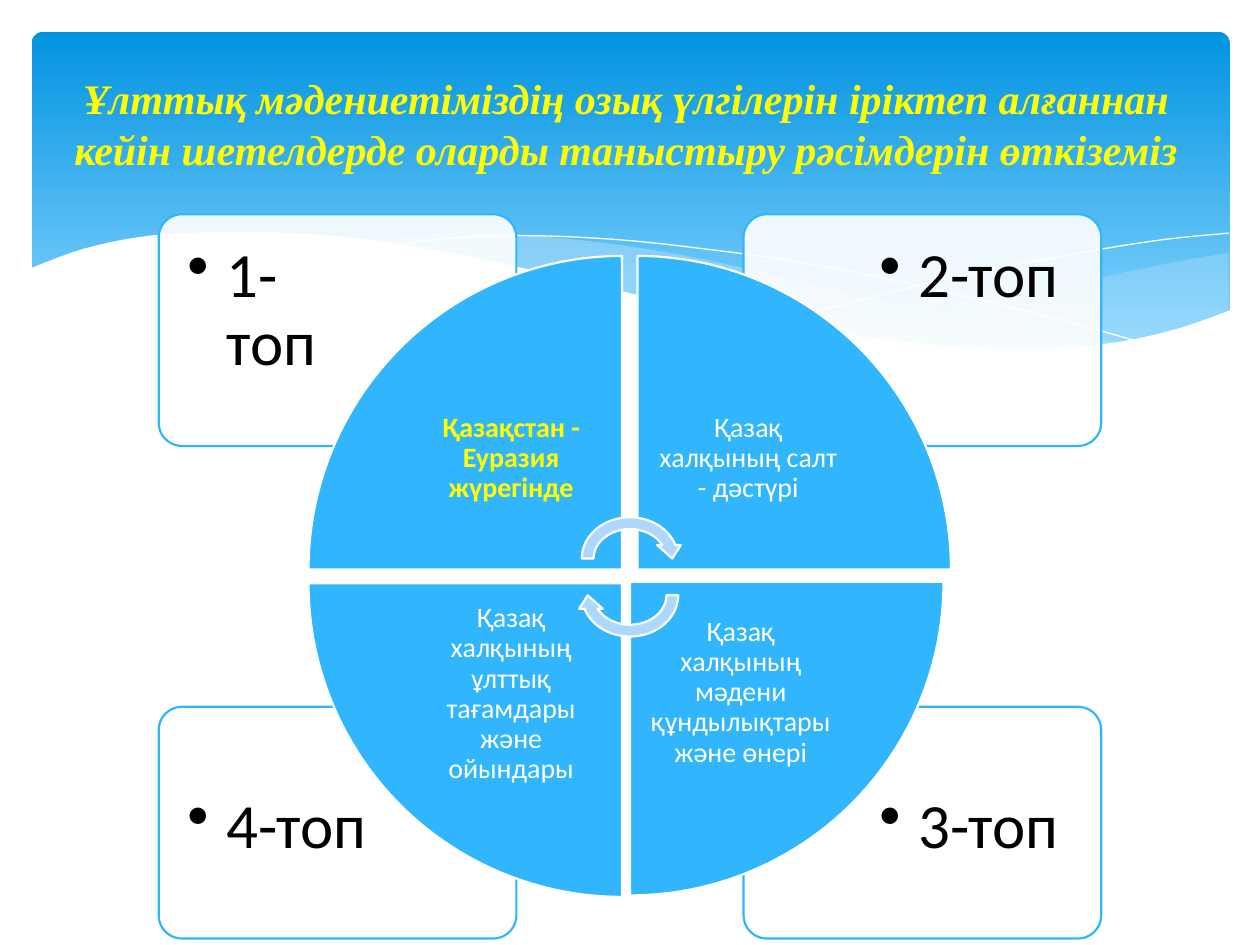
from lxml import etree
from pptx import Presentation
from pptx import util as u
from pptx.dml.color import RGBColor
from pptx.enum import shapes, text
from pptx.oxml.ns import qn

DEEP_BLUE = RGBColor(0x02, 0x93, 0xE0)
LIGHT_BLUE = RGBColor(0x83, 0xD3, 0xFE)
MIST = RGBColor(0xC6, 0xE7, 0xFC)
SKY = RGBColor(0x31, 0xB6, 0xFD)
ARROW_BLUE = RGBColor(0xAE, 0xD7, 0xFE)
WHITE = RGBColor(0xFF, 0xFF, 0xFF)
BLACK = RGBColor(0, 0, 0)
YELLOW = RGBColor(0xFF, 0xFF, 0)

RIGHT_WAVE_TOP = [(24.13, 4.45), (22.76, 4.7), (21.23, 5.03), (19.15, 5.51),
                  (17.3, 5.89), (16.15, 6.1)]
RIGHT_WAVE_BOTTOM = [(16.15, 6.1), (17.27, 6.25), (18.59, 6.38), (20.04, 6.43),
                     (21.51, 6.32), (22.76, 6.1), (24.13, 5.64)]
MIDDLE_WAVE_TOP = [(22.05, 6.3), (19.86, 5.97), (17.3, 5.46), (15.34, 5),
                   (13.46, 4.57), (11.79, 4.29), (10.03, 4.11), (8.53, 4.06),
                   (6.63, 4.22)]
MIDDLE_WAVE_BOTTOM = [(6.63, 4.22), (8.56, 4.52), (10.77, 5), (12.83, 5.46),
                      (15.06, 5.92), (17.02, 6.22), (19, 6.4), (20.4, 6.43),
                      (22.05, 6.3)]
FALLING_LINE = [(7.21, 4.32), (8.33, 4.17), (9.93, 4.11), (11.79, 4.19),
                (13.49, 4.37), (15.52, 4.65), (17.83, 5.11), (20.47, 5.74),
                (22.4, 6.27)]
RISING_LINE = [(14.94, 5.89), (17.02, 5.33), (19.08, 4.85), (21.36, 4.42),
               (22.83, 4.19), (24.13, 4.06)]
WHITE_WAVE_TOP = [(24.18, 5.61), (22.99, 6.02), (21.59, 6.3), (19.91, 6.4),
                  (17.81, 6.27), (15.27, 5.92), (12.8, 5.44), (10.72, 4.95),
                  (8.64, 4.5), (6.78, 4.19), (5.21, 4.06), (3.86, 4.04),
                  (2.39, 4.11), (1.07, 4.37), (-0.05, 4.78)]
WHITE_WAVE_BASE = [(-0.05, 7.72), (24.18, 7.72)]

GROUPS = [
    (0, 0, "1- топ", "Қазақстан - Еуразия жүрегінде", YELLOW),
    (1, 0, "2-топ", "Қазақ халқының салт - дәстүрі", WHITE),
    (1, 1, "3-топ", "Қазақ халқының мәдени құндылықтары және өнері", WHITE),
    (0, 1, "4-топ", "Қазақ халқының ұлттық тағамдары және ойындары", WHITE),
]
WEDGE_ROTATION = {(0, 0): 0, (1, 0): 90, (1, 1): 180, (0, 1): 270}


def paint(shape, fill=None, line=None, opacity=100, width=1.25):
    shape.shadow.inherit = False
    if fill is None:
        shape.fill.background()
    else:
        shape.fill.solid()
        shape.fill.fore_color.rgb = fill
        if opacity < 100:
            color = shape.fill._xPr.find(qn("a:solidFill"))[0]
            etree.SubElement(color, qn("a:alpha"), val=str(opacity * 1000))
    if line is None:
        shape.line.fill.background()
    else:
        shape.line.color.rgb = line
        shape.line.width = u.Pt(width)


def add_preset(slide, kind, left, top, width, height):
    return slide.shapes.add_shape(kind, u.Cm(left), u.Cm(top), u.Cm(width), u.Cm(height))


def smooth(points, steps=5):
    padded = [points[0], *points, points[-1]]
    curve = [points[0]]
    for before, start, end, after in zip(padded, padded[1:], padded[2:], padded[3:]):
        for step in range(1, steps + 1):
            t = step / steps
            curve.append(tuple(
                (2 * b + (c - a) * t + (2 * a - 5 * b + 4 * c - d) * t ** 2
                 + (3 * b - a - 3 * c + d) * t ** 3) / 2
                for a, b, c, d in zip(before, start, end, after)))
    return curve


def add_wave(slide, left, top, points, closed=True):
    placed = [(u.Cm(left + x), u.Cm(top + y)) for x, y in points]
    builder = slide.shapes.build_freeform(*placed[0])
    builder.add_line_segments(placed[1:], close=closed)
    return builder.convert_to_shape()


def add_banner(slide, left, top, width, height):
    banner = add_preset(slide, shapes.MSO_SHAPE.ROUNDED_RECTANGLE, left, top, width, height)
    banner.adjustments[0] = 0.034
    paint(banner)
    banner.fill.gradient()
    banner.fill.gradient_angle = 270
    stops = zip(banner.fill.gradient_stops, (0, 0.9), (DEEP_BLUE, LIGHT_BLUE))
    for stop, position, color in stops:
        stop.position = position
        stop.color.rgb = color

    right_wave = smooth(RIGHT_WAVE_TOP) + smooth(RIGHT_WAVE_BOTTOM)
    middle_wave = smooth(MIDDLE_WAVE_TOP) + smooth(MIDDLE_WAVE_BOTTOM)
    paint(add_wave(slide, left, top, right_wave), MIST, opacity=29)
    paint(add_wave(slide, left, top, middle_wave), MIST, opacity=40)
    for line in (FALLING_LINE, RISING_LINE):
        paint(add_wave(slide, left, top, smooth(line), closed=False), line=WHITE, width=0)
    paint(add_wave(slide, left, top, smooth(WHITE_WAVE_TOP) + WHITE_WAVE_BASE), WHITE)


def add_title(slide, left, top, width, height):
    title = slide.shapes.title
    title.element.getparent().append(title.element)
    title.left, title.top = u.Cm(left), u.Cm(top)
    title.width, title.height = u.Cm(width), u.Cm(height)
    frame = title.text_frame
    frame.text = ("Ұлттық мәдениетіміздің озық үлгілерін іріктеп алғаннан кейін "
                  "шетелдерде оларды таныстыру рәсімдерін өткіземіз")
    frame.word_wrap = True
    frame.vertical_anchor = text.MSO_ANCHOR.MIDDLE
    paragraph = frame.paragraphs[0]
    paragraph.alignment = text.PP_ALIGN.CENTER
    set_font(paragraph, "Times New Roman", 24, YELLOW, bold=True)
    paragraph.font.italic = True


def set_font(paragraph, name, size, color, bold=False):
    font = paragraph.font
    font.name, font.size, font.bold = name, u.Pt(size), bold
    font.color.rgb = color


def add_text(slide, left, top, width, height, words, inset):
    box = slide.shapes.add_textbox(u.Cm(left), u.Cm(top), u.Cm(width), u.Cm(height))
    frame = box.text_frame
    frame.word_wrap = True
    frame.margin_left = frame.margin_right = u.Cm(inset)
    frame.margin_top = frame.margin_bottom = u.Cm(inset)
    frame.text = words
    paragraph = frame.paragraphs[0]
    paragraph.line_spacing = 0.9
    paragraph.space_after = u.Pt(5.5)
    return frame, paragraph


def add_card(slide, left, top, width, height, column, row, label):
    card = add_preset(slide, shapes.MSO_SHAPE.ROUNDED_RECTANGLE, left, top, width, height)
    card.adjustments[0] = 0.1
    paint(card, WHITE, SKY, opacity=90)
    margin, label_width, label_height = 0.1, 4.85, 3.3
    x = left + (width - label_width - margin if column else margin)
    y = top + (height - label_height - margin if row else margin)
    _, paragraph = add_text(slide, x, y, label_width, label_height, label, 0.48)
    properties = paragraph._p.get_or_add_pPr()
    properties.set("marL", str(u.Cm(0.79)))
    properties.set("indent", str(-u.Cm(0.79)))
    etree.SubElement(properties, qn("a:buChar"), char="•")
    set_font(paragraph, "Calibri", 36, BLACK)


def add_wedge(slide, left, top, size, column, row, words, color):
    wedge = add_preset(slide, shapes.MSO_SHAPE.PIE_WEDGE, left, top, size, size)
    wedge.rotation = WEDGE_ROTATION[column, row]
    paint(wedge, SKY, WHITE)
    text_size = 4.47
    x = left + (0 if column else size - text_size)
    y = top + (0 if row else size - text_size)
    frame, paragraph = add_text(slide, x, y, text_size, text_size, words, 0.3)
    frame.vertical_anchor = text.MSO_ANCHOR.MIDDLE
    paragraph.alignment = text.PP_ALIGN.CENTER
    set_font(paragraph, "Calibri", 16, color, bold=color == YELLOW)


def add_cycle(slide, left, top, width, height):
    card_width, card_height = 7.21, 4.67
    for column, row, label, _, _ in reversed(GROUPS):
        add_card(slide, left + column * (width - card_width),
                 top + row * (height - card_height),
                 card_width, card_height, column, row, label)
    for column, row, _, words, color in GROUPS:
        nudge = 0.15 if column and row else 0
        add_wedge(slide, left + 3.02 + column * 6.63 - nudge,
                  top + 0.84 + row * 6.6 - nudge / 5,
                  6.32, column, row, words, color)
    for offset, rotation in ((5.99, 0), (6.73, 180)):
        arrow = add_preset(slide, shapes.MSO_SHAPE.CIRCULAR_ARROW,
                           left + (width - 2.18) / 2, top + offset, 2.18, 1.9)
        arrow.rotation = rotation
        paint(arrow, ARROW_BLUE, WHITE)


def main():
    presentation = Presentation()
    presentation.slide_width, presentation.slide_height = u.Cm(25.4), u.Cm(19.05)
    slide = presentation.slides.add_slide(presentation.slide_layouts[5])
    add_banner(slide, 0.64, 0.64, 24.15, 6.86)
    add_title(slide, 1.09, 0.74, 23.06, 3.48)
    add_cycle(slide, 3.2, 4.32, 19, 14.6)
    presentation.save("out.pptx")


if __name__ == "__main__":
    main()
